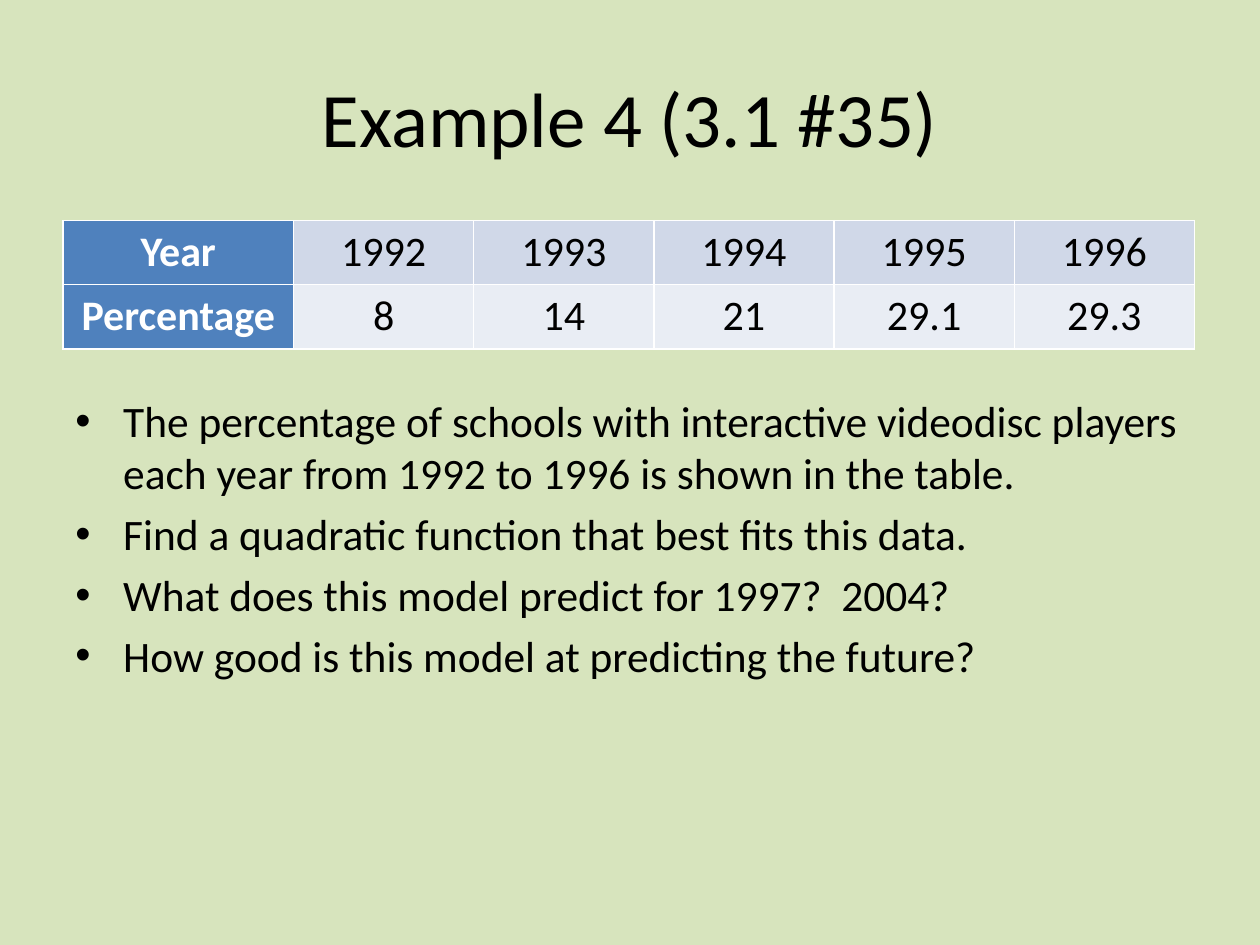
"""Build a slide with a year table and questions on a quadratic model."""
import pptx
import pptx.dml.color
import pptx.enum.text
import pptx.oxml
import pptx.oxml.ns
import pptx.util

Inches = pptx.util.Inches
Pt = pptx.util.Pt
ALIGN = pptx.enum.text.PP_ALIGN
ANCHOR = pptx.enum.text.MSO_ANCHOR

HUES = {
    "back": "D7E4BD",
    "ink": "000000",
    "white": "FFFFFF",
    "head": "4F81BD",
    "odd": "D0D8E8",
    "even": "E9EDF4",
}
ROWS = [
    ["Year", "1992", "1993", "1994", "1995", "1996"],
    ["Percentage", "8", "14", "21", "29.1", "29.3"],
]
POINTS = [
    "The percentage of schools with interactive videodisc players"
    " each year from 1992 to 1996 is shown in the table.",
    "Find a quadratic function that best fits this data.",
    "What does this model predict for 1997?  2004?",
    "How good is this model at predicting the future?",
]


def color(name):
    return pptx.dml.color.RGBColor.from_string(HUES[name])


def add_xml(parent, tag, body="", **attrs):
    extra = "".join(f' {key}="{value}"' for key, value in attrs.items())
    space = pptx.oxml.ns.nsdecls("a")
    parent.append(pptx.oxml.parse_xml(f"<a:{tag} {space}{extra}>{body}</a:{tag}>"))


def write(frame, *lines, size=24, hue="ink", bold=False, align=ALIGN.LEFT, bullet=False, gap=0):
    for index, line in enumerate(lines):
        para = frame.paragraphs[0] if index == 0 else frame.add_paragraph()
        para.alignment = align
        if index:
            para.space_before = Pt(gap)
        if bullet:
            props = para._p.get_or_add_pPr()
            props.set("marL", str(Inches(0.38)))
            props.set("indent", str(Inches(-0.38)))
            add_xml(props, "buFont", typeface="Arial")
            add_xml(props, "buChar", char="•")
        run = para.add_run()
        run.text = line
        run.font.name = "Calibri"
        run.font.size = Pt(size)
        run.font.bold = bold
        run.font.color.rgb = color(hue)


def add_box(slide, left, top, width, height, *lines, anchor=ANCHOR.TOP, **style):
    box = slide.shapes.add_textbox(Inches(left), Inches(top), Inches(width), Inches(height))
    frame = box.text_frame
    frame.word_wrap = True
    frame.vertical_anchor = anchor
    write(frame, *lines, **style)


def paint(cell, hue):
    props = cell._tc.get_or_add_tcPr()
    fill = f'<a:solidFill><a:srgbClr val="{HUES["white"]}"/></a:solidFill>'
    for side in ("lnL", "lnR", "lnT", "lnB"):
        add_xml(props, side, fill, w=Pt(1))
    cell.fill.solid()
    cell.fill.fore_color.rgb = color(hue)


def add_grid(slide):
    frame = slide.shapes.add_table(
        len(ROWS), len(ROWS[0]), Inches(0.5), Inches(1.75), Inches(9), Inches(1.02)
    )
    table = frame.table
    for index, column in enumerate(table.columns):
        column.width = Inches(1.43 if index else 1.83)
    for r, (row, shade) in enumerate(zip(ROWS, ("odd", "even"))):
        table.rows[r].height = Inches(0.51)
        for c, text in enumerate(row):
            cell = table.cell(r, c)
            head = c == 0
            paint(cell, "head" if head else shade)
            write(cell.text_frame, text, hue="white" if head else "ink", bold=head,
                  align=ALIGN.CENTER)


def main():
    deck = pptx.Presentation()
    deck.slide_width, deck.slide_height = Inches(10), Inches(7.5)
    slide = deck.slides.add_slide(deck.slide_layouts[6])
    slide.background.fill.solid()
    slide.background.fill.fore_color.rgb = color("back")
    add_box(slide, 0.5, 0.3, 9, 1.25, "Example 4 (3.1 #35)",
            anchor=ANCHOR.MIDDLE, size=44, align=ALIGN.CENTER)
    add_grid(slide)
    add_box(slide, 0.5, 3.08, 9, 2.33, *POINTS, size=24.8, bullet=True, gap=5)
    deck.save("out.pptx")


if __name__ == "__main__":
    main()
